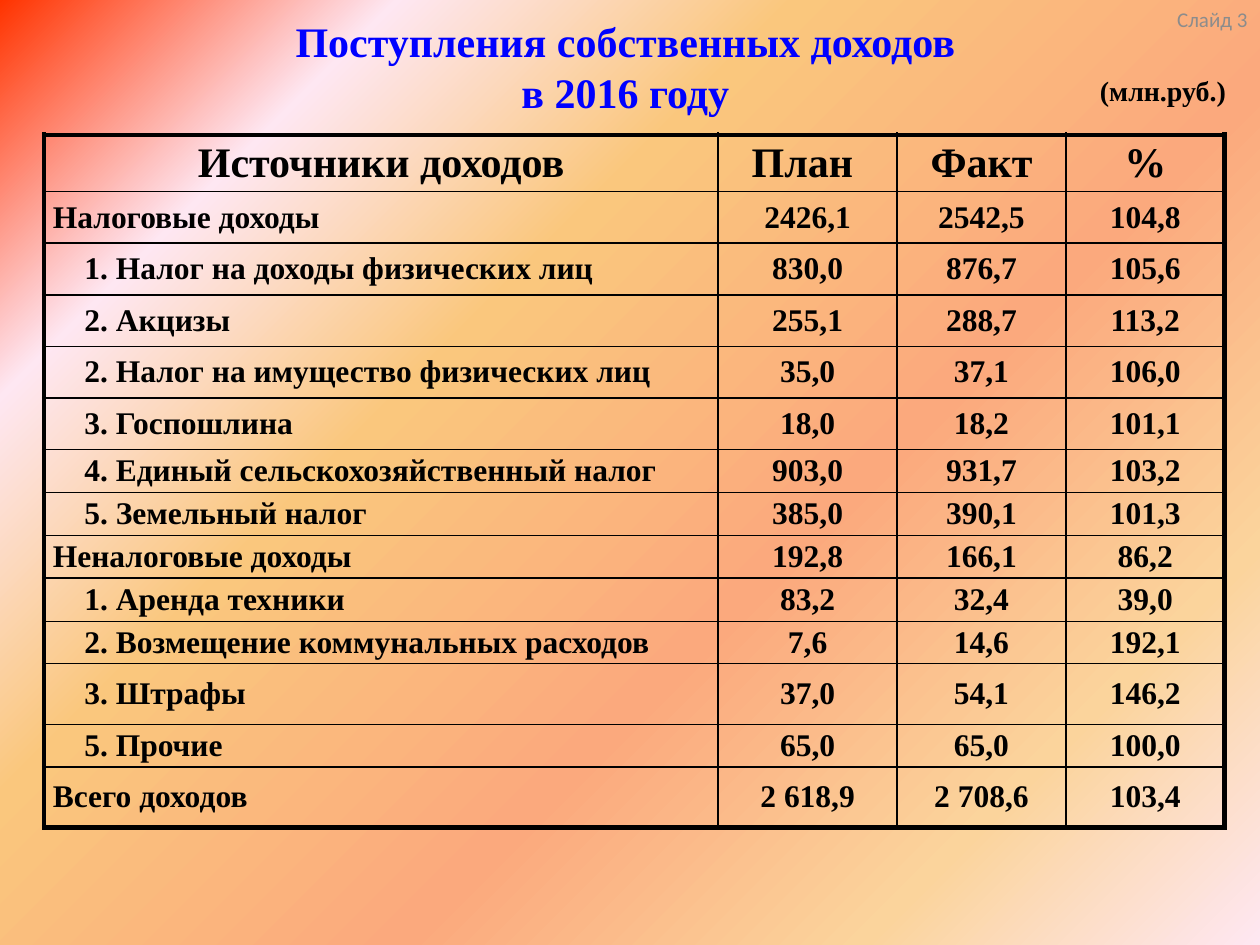
from lxml import etree
from pptx import Presentation
from pptx.dml.color import RGBColor
from pptx.enum.text import MSO_ANCHOR, MSO_AUTO_SIZE, PP_ALIGN
from pptx.oxml.ns import qn
from pptx.util import Inches, Pt

LEFT, MID, RIGHT, JUST = PP_ALIGN.LEFT, PP_ALIGN.CENTER, PP_ALIGN.RIGHT, PP_ALIGN.JUSTIFY
TOP, CENTER = MSO_ANCHOR.TOP, MSO_ANCHOR.MIDDLE
NO_FIT = MSO_AUTO_SIZE.NONE
TITLE_ONLY = 5

THEME = {
    "serif": "Times New Roman", "sans": "Calibri",
    "title": "0000FF", "ink": "000000", "muted": "8C8C8C",
    "head": 24, "body": 18, "unit": 16, "small": 12,
    "thick": 3, "thin": 1, "hair": 0.5,
    "stops": [(0, "FF3300"), (18, "FEE7F2"), (36, "FAC77D"),
              (61, "FBA97D"), (82, "FBD49C"), (100, "FEE7F2")],
}

TITLE = "Поступления собственных доходов \vв 2016 году "
UNIT = "(млн.руб.)"
PAGE = "Слайд 3"
HEADS = ("Источники доходов", "План ", "Факт", "%")
# row height, indented item or not, cells
ROWS = [
    (0.41, False, ("Налоговые доходы", "2426,1", "2542,5", "104,8")),
    (0.41, True, ("1. Налог на доходы физических лиц", "830,0", "876,7", "105,6")),
    (0.41, True, ("2. Акцизы", "255,1", "288,7", "113,2")),
    (0.41, True, ("2. Налог на имущество физических лиц", "35,0", "37,1", "106,0")),
    (0.41, True, ("3. Госпошлина", "18,0", "18,2", "101,1")),
    (0.34, True, ("4. Единый сельскохозяйственный налог", "903,0", "931,7", "103,2")),
    (0.34, True, ("5. Земельный налог", "385,0", "390,1", "101,3")),
    (0.34, False, ("Неналоговые доходы", "192,8", "166,1", "86,2")),
    (0.34, True, ("1. Аренда техники", "83,2", "32,4", "39,0")),
    (0.34, True, ("2. Возмещение коммунальных расходов", "7,6", "14,6", "192,1")),
    (0.48, True, ("3. Штрафы", "37,0", "54,1", "146,2")),
    (0.34, True, ("5. Прочие", "65,0", "65,0", "100,0")),
    (0.48, False, ("Всего доходов", "2 618,9", "2 708,6", "103,4")),
]
WIDTHS = (5.35, 1.42, 1.34, 1.26)
HAIR_BELOW = {6, 9, 10}
PAD, INDENT = 0.07, 0.25


def write(frame, text, size="body", font="serif", color="ink", bold=True, align=MID):
    para = frame.paragraphs[0]
    para.text = text
    para.alignment = align
    for run in para.runs:
        run.font.size = Pt(THEME[size])
        run.font.name = THEME[font]
        run.font.bold = bold
        run.font.color.rgb = RGBColor.from_string(THEME[color])


def place(shape, left, top, width, height):
    shape.left, shape.top = Inches(left), Inches(top)
    shape.width, shape.height = Inches(width), Inches(height)


def label(slide, box, text, anchor=CENTER, **style):
    frame = slide.shapes.add_textbox(*map(Inches, box)).text_frame
    frame.vertical_anchor = anchor
    write(frame, text, **style)


def add_color(parent, color):
    fill = etree.SubElement(parent, qn("a:solidFill"))
    etree.SubElement(fill, qn("a:srgbClr"), val=color)


def paint(slide):
    """Give the slide its diagonal gradient."""
    fill = slide.background.fill
    fill.gradient()
    fill.gradient_angle = 315
    stops = next(slide.element.iter(qn("a:gsLst")))
    for old in list(stops):
        stops.remove(old)
    for pos, color in THEME["stops"]:
        stop = etree.SubElement(stops, qn("a:gs"), pos=str(pos * 1000))
        etree.SubElement(stop, qn("a:srgbClr"), val=color)


def rule(row, last):
    """Name the weight of the line below a row; -1 is the table's top."""
    if row in (-1, last):
        return "thick"
    return "hair" if row in HAIR_BELOW else "thin"


def frame_cell(cell, row, col):
    sides = {
        "lnL": "thin" if col else "thick",
        "lnR": "thin" if col < len(WIDTHS) - 1 else "thick",
        "lnT": rule(row - 1, len(ROWS)),
        "lnB": rule(row, len(ROWS)),
    }
    props = cell._tc.get_or_add_tcPr()
    for side, weight in sides.items():
        line = etree.SubElement(props, qn("a:" + side), w=str(Pt(THEME[weight])))
        add_color(line, THEME["ink"])
    cell.fill.background()


def add_grid(slide):
    rows = [(0.45, False, HEADS)] + ROWS
    total = sum(row[0] for row in rows)
    box = map(Inches, (0.35, 1.07, sum(WIDTHS), total))
    grid = slide.shapes.add_table(len(rows), len(WIDTHS), *box).table
    grid.first_row = grid.horz_banding = False
    for col, width in zip(grid.columns, WIDTHS):
        col.width = Inches(width)
    for r, (height, item, texts) in enumerate(rows):
        grid.rows[r].height = Inches(height)
        for c, text in enumerate(texts):
            cell = grid.cell(r, c)
            inset = INDENT if item and c == 0 else 0
            cell.margin_left, cell.margin_right = Inches(PAD + inset), Inches(PAD)
            cell.margin_top = cell.margin_bottom = 0
            cell.vertical_anchor = CENTER
            align = JUST if r and c == 0 else MID
            write(cell.text_frame, text, size="body" if r else "head", align=align)
            frame_cell(cell, r, c)


def main():
    deck = Presentation()
    deck.slide_width, deck.slide_height = Inches(10), Inches(7.5)
    slide = deck.slides.add_slide(deck.slide_layouts[TITLE_ONLY])
    paint(slide)
    title = slide.shapes.title
    place(title, 0.28, 0.13, 9.45, 0.79)
    title.text_frame.auto_size = NO_FIT
    title.text_frame.vertical_anchor = CENTER
    write(title.text_frame, TITLE, size="head", color="title")
    label(slide, (8.62, 0.52, 1.22, 0.39), UNIT, size="unit")
    label(slide, (9.17, 0, 0.83, 0.52), PAGE, anchor=TOP, size="small",
          font="sans", color="muted", bold=False, align=RIGHT)
    add_grid(slide)
    deck.save("out.pptx")


if __name__ == "__main__":
    main()
